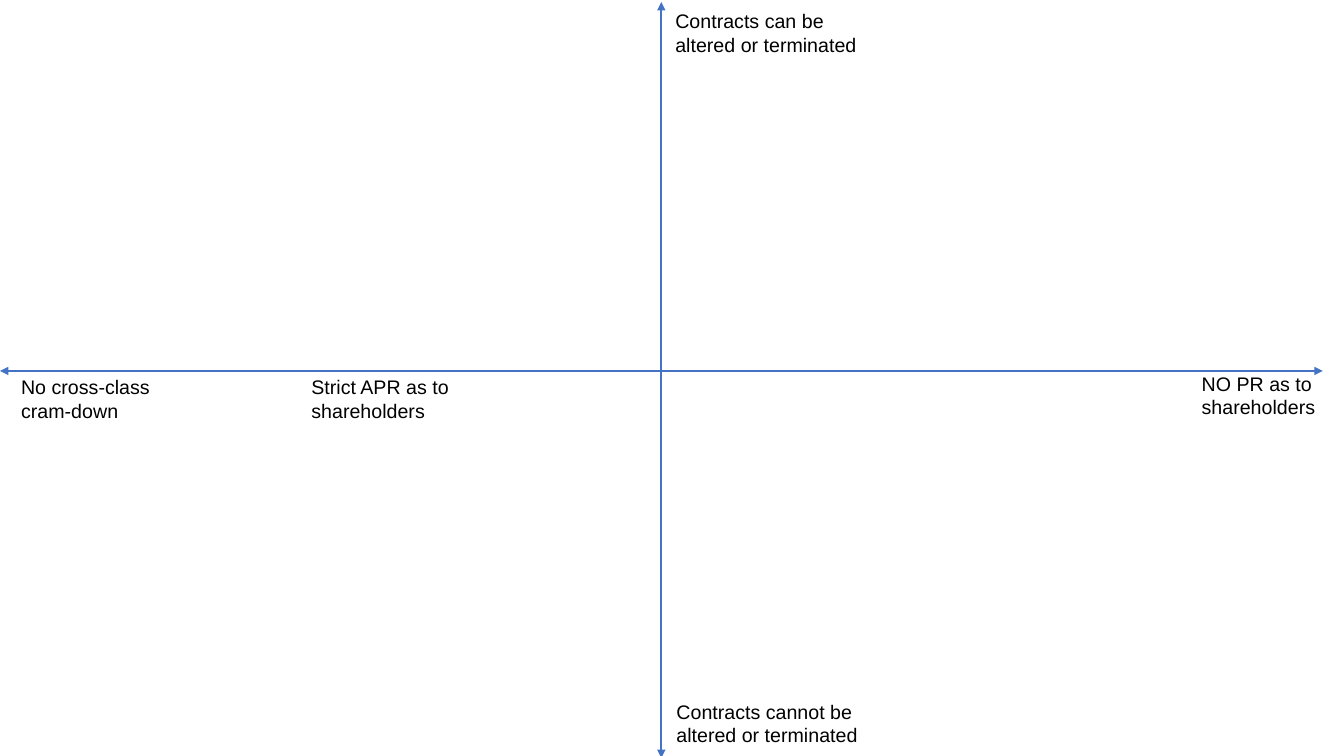
from typing import NamedTuple

from lxml.etree import SubElement
from pptx import Presentation
from pptx.dml.color import RGBColor
from pptx.enum.shapes import MSO_CONNECTOR as Connector
from pptx.enum.text import MSO_AUTO_SIZE as AutoSize
from pptx.oxml.ns import qn
from pptx.slide import Slide
from pptx.util import Inches, Length, Pt

WIDTH, HEIGHT = 13.33, 7.5
AXIS_COLOUR = "4472C4"
TEXT_COLOUR = "000000"

# Positions and sizes below are percentages of the slide's width and height.
CENTRE_X, CENTRE_Y = 49.21, 49.07
BELOW_AXIS = 48.93
LABEL_WIDTH = 15.45
SIDE_HEIGHT, END_HEIGHT = 11.73, 7.6


class Axis(NamedTuple):
    x1: float
    y1: float
    x2: float
    y2: float


class Label(NamedTuple):
    paragraphs: tuple[str, ...]
    x: float
    y: float
    height: float
    width: float = LABEL_WIDTH


AXES = (
    Axis(0, CENTRE_Y, 98.42, CENTRE_Y),
    Axis(CENTRE_X, 100.27, CENTRE_X, 0.27),
)

LABELS = (
    Label(("Strict APR as to shareholders",), 22.43, BELOW_AXIS, SIDE_HEIGHT),
    Label(("Contracts cannot be altered or terminated",), 49.59, 91.87, END_HEIGHT, 15.75),
    Label(("NO PR as to shareholders",), 88.67, 48.53, SIDE_HEIGHT),
    Label(("Contracts can be altered or terminated",), 49.51, 0.53, END_HEIGHT),
    Label(("No cross-class", "cram-down"), 0.83, BELOW_AXIS, SIDE_HEIGHT),
)


def across(percent: float) -> Length:
    return Inches(WIDTH * percent / 100)


def down(percent: float) -> Length:
    return Inches(HEIGHT * percent / 100)


def colour(value: str) -> RGBColor:
    return RGBColor.from_string(value)


def draw_axis(slide: Slide, axis: Axis) -> None:
    """Draw a line with a triangular arrowhead at both ends."""
    arrow = slide.shapes.add_connector(
        Connector.STRAIGHT, across(axis.x1), down(axis.y1), across(axis.x2), down(axis.y2)
    )
    arrow.line.color.rgb = colour(AXIS_COLOUR)
    arrow.line.width = Pt(1.5)
    outline = arrow.line._get_or_add_ln()
    for end in ("a:headEnd", "a:tailEnd"):
        SubElement(outline, qn(end), type="triangle")
    SubElement(arrow._element.spPr, qn("a:effectLst"))


def add_text(slide: Slide, label: Label, *, font: str = "Arial", size: float = 14,
             ink: str = TEXT_COLOUR) -> None:
    frame = slide.shapes.add_textbox(
        across(label.x), down(label.y), across(label.width), down(label.height)
    ).text_frame
    frame.word_wrap = True
    frame.auto_size = AutoSize.SHAPE_TO_FIT_TEXT
    frame.text = "\n".join(label.paragraphs)
    for paragraph in frame.paragraphs:
        for run in paragraph.runs:
            run.font.name = font
            run.font.size = Pt(size)
            run.font.color.rgb = colour(ink)


def main() -> None:
    deck = Presentation()
    deck.slide_width, deck.slide_height = Inches(WIDTH), Inches(HEIGHT)
    slide = deck.slides.add_slide(deck.slide_layouts.get_by_name("Blank"))
    for axis in AXES:
        draw_axis(slide, axis)
    for label in LABELS:
        add_text(slide, label)
    deck.save("out.pptx")


if __name__ == "__main__":
    main()
